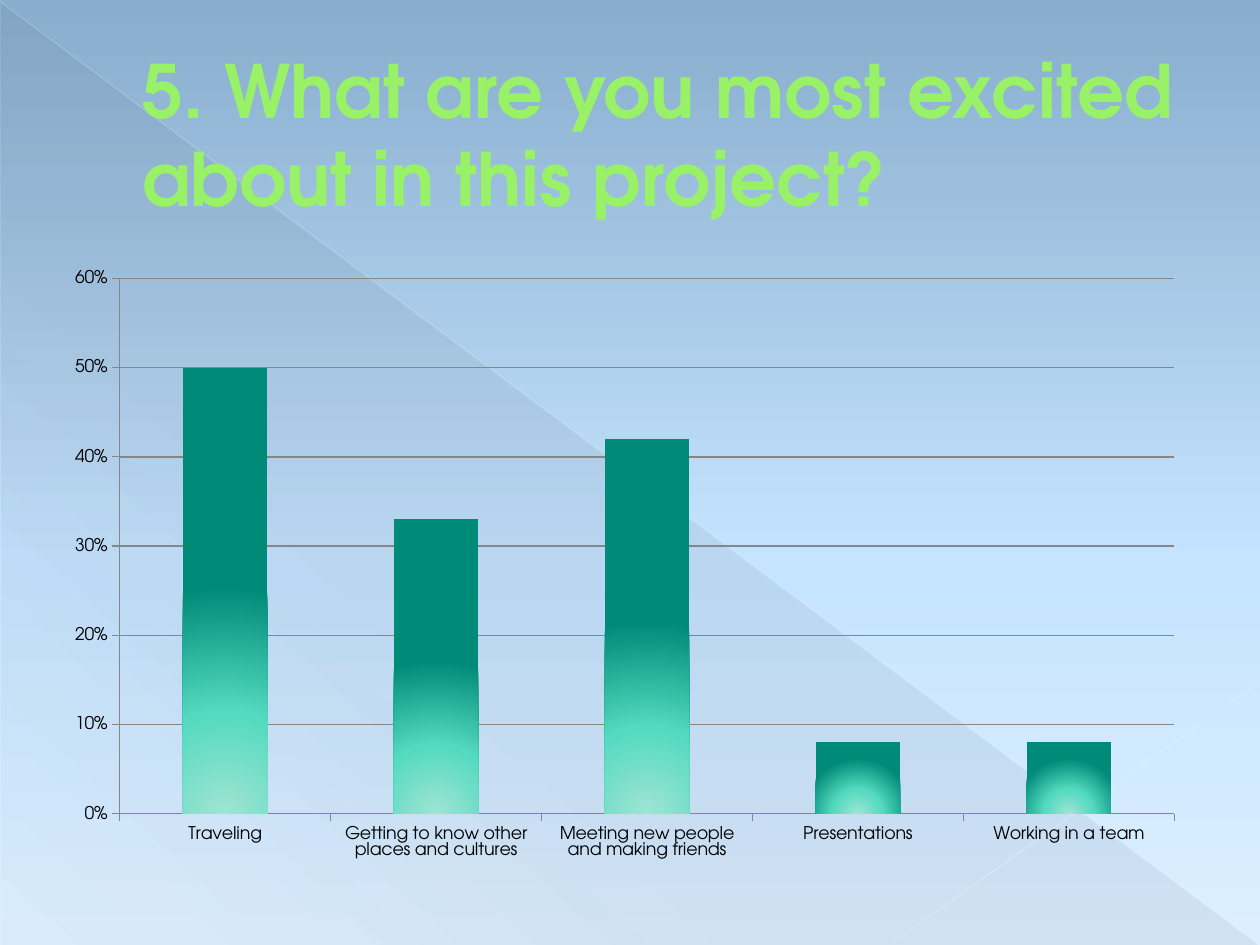
import pptx
import pptx.chart.data
import pptx.dml.color
import pptx.enum.chart
import pptx.enum.shapes
import pptx.enum.text
import pptx.oxml
import pptx.oxml.ns
import pptx.util
from dataclasses import dataclass
from pptx.util import Inches

qn = pptx.oxml.ns.qn
NAMESPACE = 'xmlns:a="http://schemas.openxmlformats.org/drawingml/2006/main"'


@dataclass(frozen=True)
class Theme:
    font: str = "TeX Gyre Adventor"
    title_size: float = 42
    chart_size: float = 10
    title: str = "98F167"
    title_outline: str = "589129"
    text: str = "000000"
    axis: str = "868686"
    # Gradient stops: position %, colour, opacity %
    sky: tuple = ((0, "88ADCD", 100), (60, "C5E4FF", 100), (100, "DDEFFF", 100))
    shade: tuple = ((0, "4E5B6F", 10), (70, "4E5B6F", 8), (100, "4E5B6F", 1))
    bars: tuple = ((0, "A0E4D3", 100), (45, "53DABF", 100), (100, "008A78", 100))


def rgb(value):
    return pptx.dml.color.RGBColor.from_string(value)


def color_xml(value, opacity):
    return f'<a:srgbClr val="{value}"><a:alpha val="{opacity * 1000}"/></a:srgbClr>'


def apply_gradient(fill, parent, stops, direction):
    """Give parent a gradient; fill is the fill format that belongs to it."""
    fill.solid()
    stop_xml = "".join(
        f'<a:gs pos="{position * 1000}">{color_xml(value, opacity)}</a:gs>'
        for position, value, opacity in stops)
    gradient = pptx.oxml.parse_xml(
        f'<a:gradFill {NAMESPACE} rotWithShape="1"><a:gsLst>{stop_xml}</a:gsLst>'
        f'{direction}</a:gradFill>')
    solid = parent.find(qn("a:solidFill"))
    parent.replace(solid, gradient)


def linear(angle):
    return f'<a:lin ang="{angle * 60000}" scaled="0"/>'


FROM_BOTTOM = '<a:path path="circle"><a:fillToRect l="50000" t="100000" r="50000"/></a:path>'


class SlideBuilder:
    def __init__(self, slide, theme):
        self.slide = slide
        self.theme = theme

    def background(self):
        fill = self.slide.background.fill
        fill.solid()
        properties = next(self.slide.element.iter(qn("p:bgPr")))
        apply_gradient(fill, properties, self.theme.sky, linear(90))

    def triangle(self, left, top, width, height):
        shape = self.slide.shapes.add_shape(
            pptx.enum.shapes.MSO_SHAPE.RIGHT_TRIANGLE,
            Inches(left), Inches(top), Inches(width), Inches(height))
        shape.shadow.inherit = False
        shape.line.fill.background()
        apply_gradient(shape.fill, shape.element.spPr, self.theme.shade, linear(133))

    def line(self, start, end, color, width, opacity):
        connector = self.slide.shapes.add_connector(
            pptx.enum.shapes.MSO_CONNECTOR.STRAIGHT,
            *(Inches(value) for value in (*start, *end)))
        connector.line.width = pptx.util.Pt(width)
        connector.line.color.rgb = rgb(color)
        properties = connector.element.spPr
        solid = next(properties.iter(qn("a:solidFill")))
        solid.replace(solid[0], pptx.oxml.parse_xml(
            color_xml(color, opacity).replace("<a:srgbClr", f"<a:srgbClr {NAMESPACE}", 1)))
        properties.append(pptx.oxml.parse_xml(f"<a:effectLst {NAMESPACE}/>"))

    def title(self, text, left, top, width, height, indent):
        box = self.slide.shapes.add_textbox(
            Inches(left), Inches(top), Inches(width), Inches(height))
        frame = box.text_frame
        frame.word_wrap = True
        frame.vertical_anchor = pptx.enum.text.MSO_ANCHOR.MIDDLE
        paragraph = frame.paragraphs[0]
        properties = paragraph._p.get_or_add_pPr()
        properties.set("marL", str(Inches(indent)))
        properties.set("indent", "0")
        run = paragraph.add_run()
        run.text = text
        run.font.name = self.theme.font
        run.font.size = pptx.util.Pt(self.theme.title_size)
        run.font.bold = True
        run.font.color.rgb = rgb(self.theme.title)
        run._r.get_or_add_rPr().insert(0, pptx.oxml.parse_xml(
            f'<a:ln {NAMESPACE} w="{pptx.util.Pt(0.5)}"><a:solidFill>'
            f'{color_xml(self.theme.title_outline, 100)}</a:solidFill></a:ln>'))

    def column_chart(self, answers, left, top, width, height, plot):
        data = pptx.chart.data.CategoryChartData(number_format="0%")
        data.categories = list(answers)
        data.add_series("Series 1", list(answers.values()))
        chart = self.slide.shapes.add_chart(
            pptx.enum.chart.XL_CHART_TYPE.COLUMN_CLUSTERED,
            Inches(left), Inches(top), Inches(width), Inches(height), data).chart
        chart.has_legend = False
        chart.has_title = False
        chart.font.name = self.theme.font
        chart.font.size = pptx.util.Pt(self.theme.chart_size)
        chart.font.color.rgb = rgb(self.theme.text)

        # Axes and gridlines
        value_axis = chart.value_axis
        value_axis.minimum_scale = 0
        value_axis.maximum_scale = 0.6
        value_axis.major_unit = 0.1
        value_axis.has_major_gridlines = True
        value_axis.tick_labels.number_format = "0%"
        value_axis.tick_labels.number_format_is_linked = False
        for axis in (chart.category_axis, value_axis):
            axis.major_tick_mark = pptx.enum.chart.XL_TICK_MARK.OUTSIDE
        for item in (chart.category_axis, value_axis, value_axis.major_gridlines):
            item.format.line.color.rgb = rgb(self.theme.axis)
            item.format.line.width = pptx.util.Pt(0.75)

        # Columns
        columns = chart.plots[0]
        columns.gap_width = 150
        columns.vary_by_categories = False
        series = columns.series[0]
        fill = series.format.fill
        fill.solid()
        apply_gradient(fill, series._element.find(qn("c:spPr")),
                       self.theme.bars, FROM_BOTTOM)

        # Fixed inner plot area
        area = chart._chartSpace.chart.plotArea
        for layout in area.findall(qn("c:layout")):
            area.remove(layout)
        sizes = "".join(f'<c:{name} val="{value}"/>'
                        for name, value in zip("xywh", plot))
        area.insert(0, pptx.oxml.parse_xml(
            '<c:layout xmlns:c="http://schemas.openxmlformats.org/drawingml/2006/chart">'
            '<c:manualLayout><c:layoutTarget val="inner"/><c:xMode val="edge"/>'
            f'<c:yMode val="edge"/>{sizes}</c:manualLayout></c:layout>'))


def main():
    presentation = pptx.Presentation()
    presentation.slide_width = Inches(10)
    presentation.slide_height = Inches(7.5)
    slide = presentation.slides.add_slide(presentation.slide_layouts[6])
    builder = SlideBuilder(slide, Theme())

    # Backdrop
    builder.background()
    builder.triangle(0.01, 0.02, 9.98, 7.48)
    builder.line((0, 0.01), (9.99, 7.49), "EAF5FF", 0.39, 35)
    builder.line((10, 5.41), (7.07, 7.49), "ECF6FF", 0.47, 45)

    # Question
    builder.title("5. What are you most excited about in this project?",
                  0.5, 0.29, 9, 1.53, indent=0.53)

    # Answers
    answers = {
        "Traveling": 0.5,
        "Getting to know other places and cultures": 0.33,
        "Meeting new people and making friends": 0.42,
        "Presentations": 0.08,
        "Working in a team": 0.08,
    }
    builder.column_chart(answers, 0.5, 2.06, 9, 5, plot=(0.05, 0.03, 0.93, 0.85))

    presentation.save("out.pptx")


if __name__ == "__main__":
    main()
